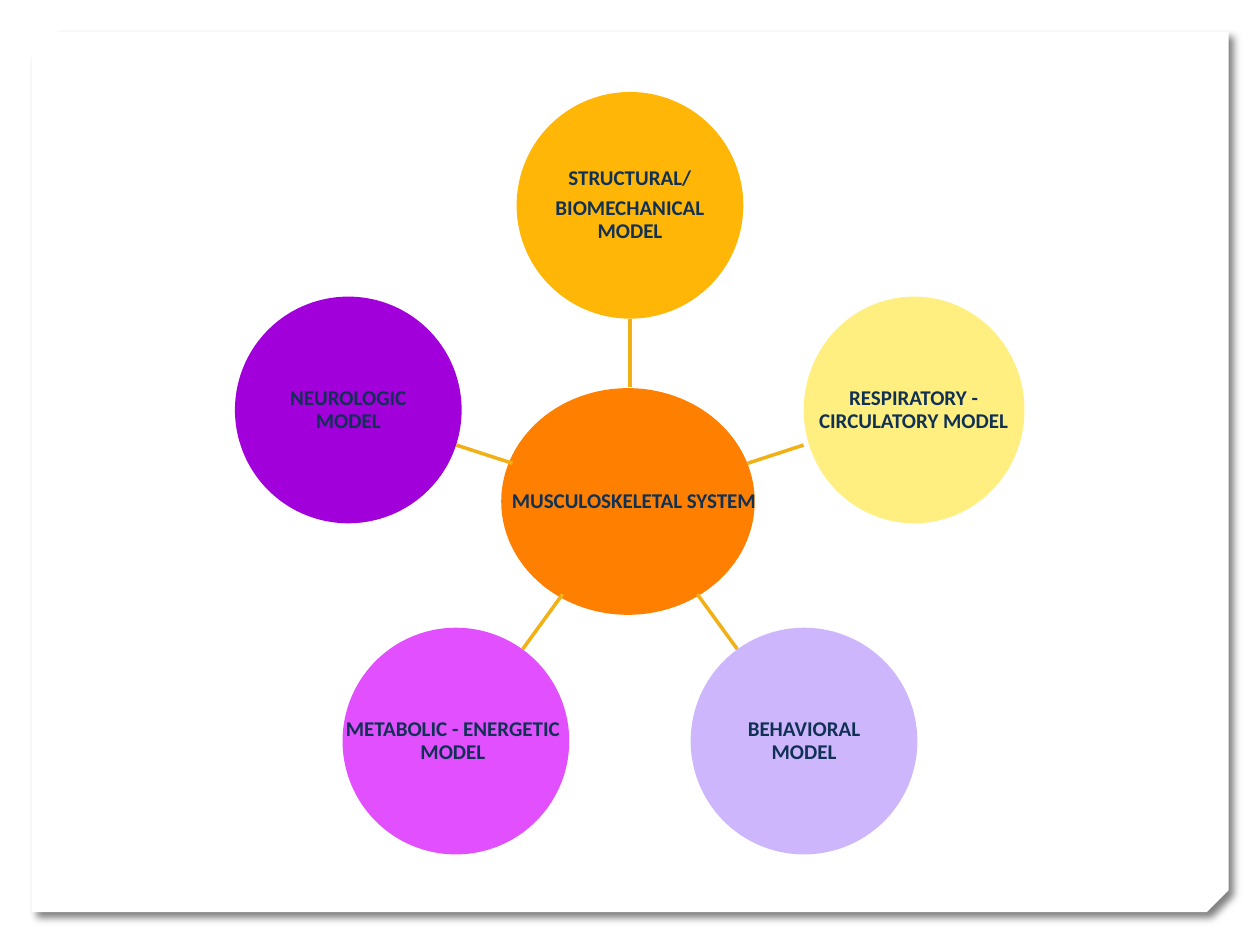
from math import cos, radians, sin

from lxml import etree
from pptx import Presentation
from pptx.dml.color import RGBColor
from pptx.enum.shapes import MSO_CONNECTOR, MSO_SHAPE
from pptx.enum.text import MSO_ANCHOR, PP_ALIGN
from pptx.oxml import parse_xml
from pptx.oxml.ns import nsdecls, qn
from pptx.util import Cm, Pt

OVAL = MSO_SHAPE.OVAL
PANEL = MSO_SHAPE.SNIP_2_DIAG_RECTANGLE
STRAIGHT = MSO_CONNECTOR.STRAIGHT
MIDDLE = MSO_ANCHOR.MIDDLE
CENTER = PP_ALIGN.CENTER

HUB = {"lines": ["MUSCULOSKELETAL SYSTEM"], "fill": "FF7F01",
       "width": 5.11, "label_width": 5.49, "shift": -0.04, "label_shift": 0.08}
MODELS = [
    {"lines": ["STRUCTURAL/", "BIOMECHANICAL MODEL"], "fill": "FFB607",
     "label_width": 3.33, "spoke_start": 2.31},
    {"lines": ["RESPIRATORY - CIRCULATORY MODEL"], "fill": "FFEF81",
     "width": 4.45, "label_width": 3.91, "shift": 0.05, "label_shift": 0.04,
     "spoke_start": 2.49},
    {"lines": ["BEHAVIORAL MODEL"], "fill": "CEB6FD",
     "label_width": 3.23, "spoke_start": 2.31},
    {"lines": ["METABOLIC - ENERGETIC MODEL"], "fill": "E14FFF",
     "label_width": 4.45, "label_shift": -0.06, "spoke_start": 2.31},
    {"lines": ["NEUROLOGIC MODEL"], "fill": "A100DA",
     "label_width": 3.23, "spoke_start": 2.49},
]
CENTER_X, CENTER_Y = 12.7, 10.11
RING_RADIUS, SPOKE_END = 5.97, 3.68
DISC_SIZE, LABEL_HEIGHT, INSET = 4.57, 3.23, 0.03
SHADOW = (
    f'<a:outerShdw {nsdecls("a")} blurRad="50800" dist="63500" dir="2700000" '
    'algn="tl" rotWithShape="0"><a:srgbClr val="000000">'
    '<a:alpha val="50000"/></a:srgbClr></a:outerShdw>'
)


def color(value):
    return RGBColor.from_string(value)


def ring_point(angle, radius):
    return CENTER_X + radius * sin(angle), CENTER_Y - radius * cos(angle)


def add_filled(slide, kind, left, top, width, height, fill):
    shape = slide.shapes.add_shape(kind, Cm(left), Cm(top), Cm(width), Cm(height))
    shape.shadow.inherit = False
    shape.fill.solid()
    shape.fill.fore_color.rgb = color(fill)
    shape.line.fill.background()
    return shape


def add_panel(slide):
    panel = add_filled(slide, PANEL, 0.64, 0.64, 24.13, 17.75, "FFFFFF")
    panel.adjustments[0] = 0.025
    panel.adjustments[1] = 0
    panel._element.spPr.find(qn("a:effectLst")).append(parse_xml(SHADOW))


def add_label(slide, lines, x, y, width):
    box = slide.shapes.add_textbox(
        Cm(x - width / 2), Cm(y - LABEL_HEIGHT / 2), Cm(width), Cm(LABEL_HEIGHT))
    frame = box.text_frame
    frame.word_wrap = True
    frame.vertical_anchor = MIDDLE
    frame.margin_left = frame.margin_right = Cm(INSET)
    frame.margin_top = frame.margin_bottom = Cm(INSET)
    frame.text = "\n".join(lines)
    for para in frame.paragraphs:
        para.alignment = CENTER
        para.line_spacing = 0.9
        para.space_after = Pt(4.2)
        para.font.name = "Calibri"
        para.font.size = Pt(12)
        para.font.bold = True
        para.font.color.rgb = color("103154")


def add_disc(slide, item, x, y):
    width = item.get("width", DISC_SIZE)
    left = x + item.get("shift", 0) - width / 2
    add_filled(slide, OVAL, left, y - DISC_SIZE / 2, width, DISC_SIZE, item["fill"])
    add_label(slide, item["lines"], x + item.get("label_shift", 0), y,
              item["label_width"])


def add_spoke(slide, angle, start):
    ends = [Cm(value) for radius in (start, SPOKE_END)
            for value in ring_point(angle, radius)]
    spoke = slide.shapes.add_connector(STRAIGHT, *ends)
    spoke.line.color.rgb = color("F1B015")
    spoke.line.width = Pt(2)
    etree.SubElement(spoke._element.spPr, qn("a:effectLst"))


def main():
    """Build the hub-and-spoke slide of the five models."""
    deck = Presentation()
    deck.slide_width, deck.slide_height = Cm(25.4), Cm(19.05)
    slide = deck.slides.add_slide(deck.slide_layouts[6])
    add_panel(slide)
    add_disc(slide, HUB, CENTER_X, CENTER_Y)
    for index, model in enumerate(MODELS):
        angle = radians(index * 360 / len(MODELS))
        add_spoke(slide, angle, model["spoke_start"])
        add_disc(slide, model, *ring_point(angle, RING_RADIUS))
    deck.save("out.pptx")


if __name__ == "__main__":
    main()
